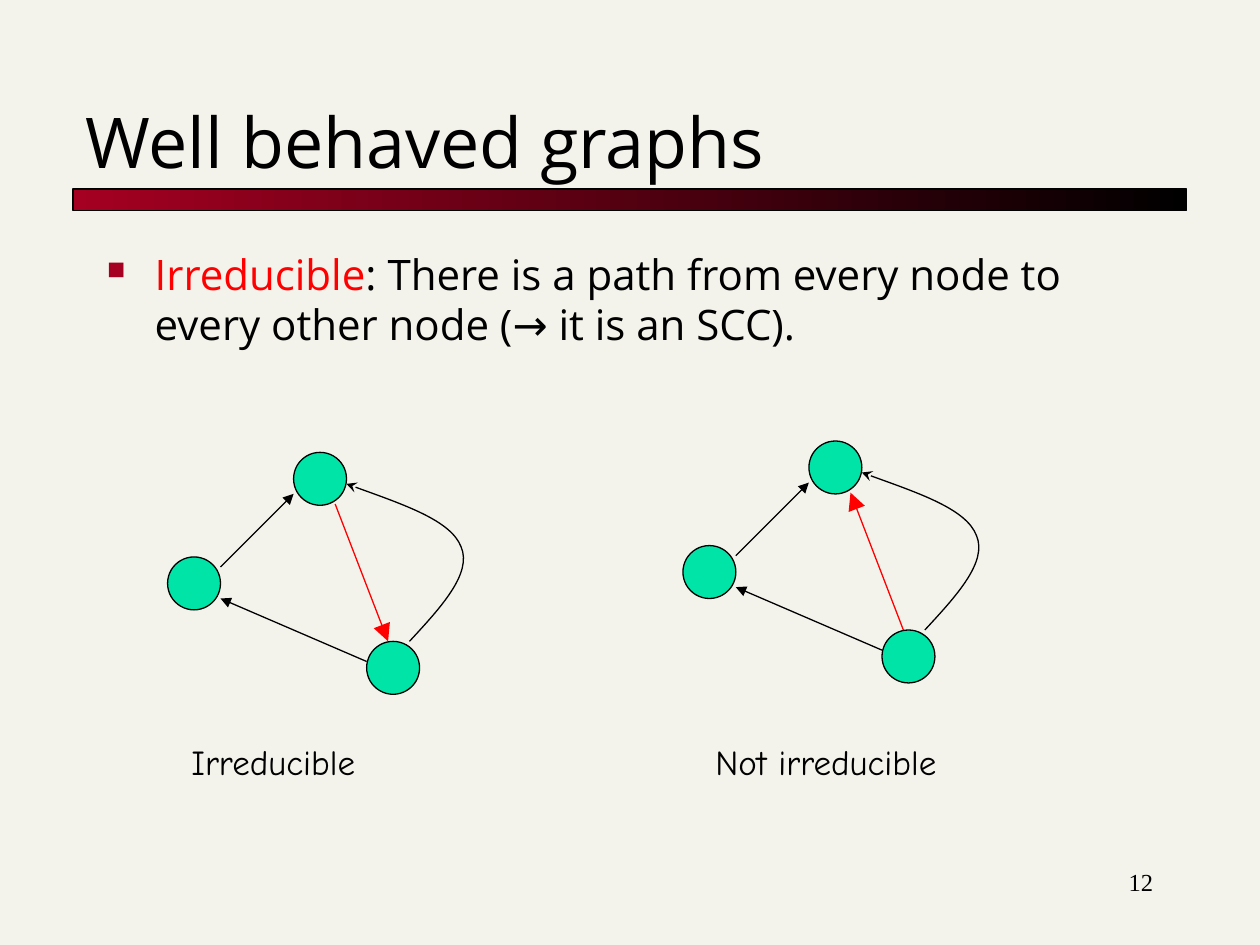
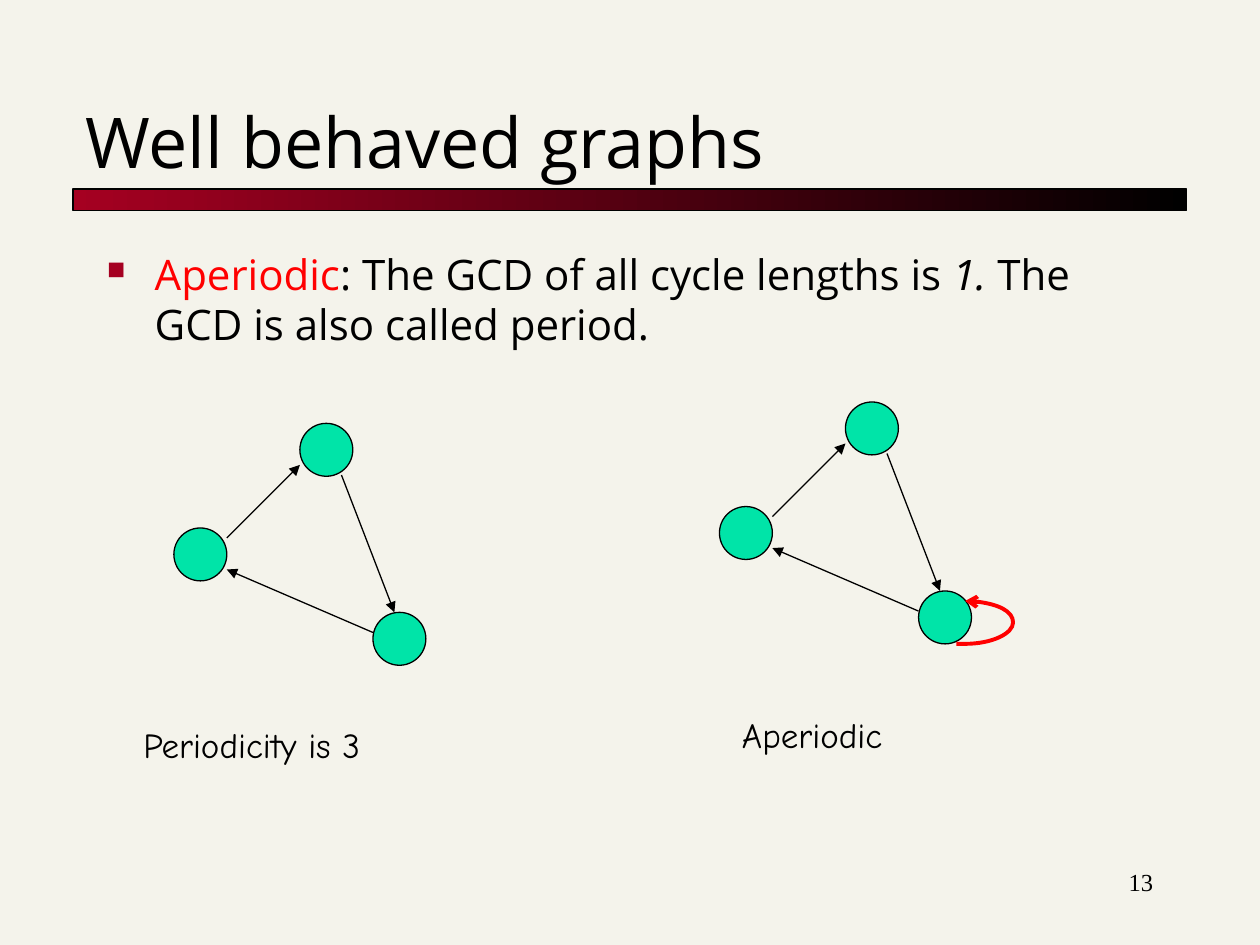
import pptx
import pptx.dml.color
import pptx.enum.shapes
import pptx.enum.text
import pptx.oxml
import pptx.oxml.ns
import pptx.util
from lxml import etree

Inches = pptx.util.Inches
Pt = pptx.util.Pt
RGB = pptx.dml.color.RGBColor
SHAPE = pptx.enum.shapes.MSO_SHAPE
ANCHOR = pptx.enum.text.MSO_ANCHOR
ALIGN = pptx.enum.text.PP_ALIGN
qn = pptx.oxml.ns.qn

CREAM = RGB(0xF4, 0xF3, 0xEB)
WINE = RGB(0xA5, 0x00, 0x21)
BLACK = RGB(0, 0, 0)
RED = RGB(0xFF, 0, 0)
GREEN = RGB(0x00, 0xE4, 0xA8)

TITLE = {"name": "Open Sans", "size": Pt(40)}
BODY = {"name": "Open Sans", "size": Pt(24)}
LABEL = {"name": "Comic Neue", "size": Pt(20)}
NUMBER = {"name": "Times New Roman", "size": Pt(14)}

# Graph parts, in inches from the corner of the left node
SIZE = 0.42
NODES = [(0, 0), (1, -0.83), (1.58, 0.67)]
UP = [(0.42, 0.08), (1, -0.5)]
DOWN = [(1.33, -0.42), (1.75, 0.67)]
BACK = [(1.58, 0.83), (0.42, 0.33)]
ARC = [(1.92, 0.67), (2.17, 0.4), (2.42, 0.13), (2.33, -0.08),
       (2.25, -0.29), (1.83, -0.43), (1.42, -0.58)]
LOOP = [(1.88, 1.09), (1.91, 1.09), (1.93, 1.09), (1.95, 1.09),
        (2.16, 1.09), (2.33, 1.01), (2.33, 0.92),
        (2.33, 0.83), (2.16, 0.75), (1.95, 0.75)]


class Deck:
    def __init__(self):
        self.prs = pptx.Presentation()
        self.prs.slide_width = Inches(10)
        self.prs.slide_height = Inches(7.5)
        self.slide = None

    def page(self, title, num):
        """Start a slide with its background, band, title and number."""
        self.slide = self.prs.slides.add_slide(self.prs.slide_layouts[6])
        fill = self.slide.background.fill
        fill.solid()
        fill.fore_color.rgb = CREAM
        self.band()
        self.text((0.58, 0.42, 8.83, 1.08), [(title, {})], TITLE, ANCHOR.BOTTOM)
        self.text((7.17, 6.83, 2.08, 0.5), [(str(num), {})], NUMBER).alignment = ALIGN.RIGHT

    def shape(self, kind, box):
        item = self.slide.shapes.add_shape(kind, *map(Inches, box))
        item.shadow.inherit = False
        self.line(item, BLACK)
        return item

    def line(self, item, color, width=0.75):
        item.line.color.rgb = color
        item.line.width = Pt(width)

    def band(self):
        fill = self.shape(SHAPE.RECTANGLE, (0.58, 1.5, 8.84, 0.17)).fill
        fill.gradient()
        fill.gradient_angle = 0
        for stop, color in zip(fill.gradient_stops, (WINE, BLACK)):
            stop.color.rgb = color

    def text(self, box, runs, style, anchor=ANCHOR.TOP):
        """Add one paragraph of (text, format) runs and return it."""
        frame = self.slide.shapes.add_textbox(*map(Inches, box)).text_frame
        frame.word_wrap = True
        frame.vertical_anchor = anchor
        para = frame.paragraphs[0]
        for words, extra in runs:
            run = para.add_run()
            run.text = words
            form = {**style, "color": BLACK, **extra}
            run.font.color.rgb = form.pop("color")
            for key, value in form.items():
                setattr(run.font, key, value)
        return para

    def indent(self, para, left, first=0.0):
        props = para._p.get_or_add_pPr()
        props.set("marL", str(Inches(left)))
        props.set("indent", str(Inches(first)))
        return props

    def bullet(self, runs):
        para = self.text((0.75, 1.92, 8.5, 5.33), runs, BODY)
        props = self.indent(para, 0.38, -0.38)
        color = etree.SubElement(props, qn("a:buClr"))
        etree.SubElement(color, qn("a:srgbClr"), val=str(WINE))
        etree.SubElement(props, qn("a:buSzPct"), val="60000")
        etree.SubElement(props, qn("a:buChar"), char="■")

    def label(self, words, left, top, width, indent=0):
        para = self.text((left, top, width, 0.5), [(words, {})], LABEL)
        if indent:
            self.indent(para, indent)

    def head(self, item, kind, size="med"):
        """Put an arrowhead at the end of a line."""
        ln = item.element.spPr.find(qn("a:ln"))
        etree.SubElement(ln, qn("a:tailEnd"), type=kind, w=size, len=size)

    def arrow(self, start, end, color=BLACK, size="med"):
        item = self.slide.shapes.add_connector(
            pptx.enum.shapes.MSO_CONNECTOR.STRAIGHT, *map(Inches, (*start, *end)))
        self.line(item, color)
        self.head(item, "triangle", size)
        etree.SubElement(item.element.spPr, qn("a:effectLst"))

    def curve(self, points, kind, color=BLACK, width=0.75):
        """Draw a Bezier curve: a start, then three points per segment."""
        start, *rest = [(Inches(x), Inches(y)) for x, y in points]
        maker = self.slide.shapes.build_freeform(*start)
        maker.add_line_segments(rest, close=False)
        item = maker.convert_to_shape()
        item.shadow.inherit = False
        item.fill.background()
        self.line(item, color, width)
        self.head(item, kind)
        # Turn each three straight steps into one cubic segment
        track = next(item.element.iter(qn("a:path")))
        steps = track.findall(qn("a:lnTo"))
        for i in range(0, len(steps), 3):
            cubic = etree.SubElement(track, qn("a:cubicBezTo"))
            for step in steps[i:i + 3]:
                cubic.append(step[0])
                track.remove(step)

    def graph(self, left, top, down=DOWN, red=False, arc=False, loop=False):
        def place(points):
            return [(left + x, top + y) for x, y in points]

        for x, y in place(NODES):
            fill = self.shape(SHAPE.OVAL, (x, y, SIZE, SIZE)).fill
            fill.solid()
            fill.fore_color.rgb = GREEN
        self.arrow(*place(UP))
        self.arrow(*place(down), *((RED, "lg") if red else ()))
        self.arrow(*place(BACK))
        if arc:
            self.curve(place(ARC), "stealth")
        if loop:
            self.curve(place(LOOP), "arrow", RED, 2.25)


def main():
    deck = Deck()
    title = "Well behaved graphs"

    # Irreducible graphs
    deck.page(title, 12)
    deck.bullet([
        ("Irreducible", {"color": RED}),
        (": There is a path from every node to every other node (→ it is an SCC).", {})])
    deck.graph(1.33, 4.42, red=True, arc=True)
    deck.graph(5.42, 4.33, down=DOWN[::-1], red=True, arc=True)
    deck.label("Irreducible", 1.42, 5.83, 2.42)
    deck.label("Not irreducible", 5.58, 5.83, 3.17)

    # Aperiodic graphs
    deck.page(title, 13)
    deck.bullet([
        ("Aperiodic", {"color": RED}),
        (": The GCD of all cycle lengths is ", {}),
        ("1. ", {"italic": True}),
        ("The GCD is also called period.", {})])
    deck.label("Aperiodic", 4.79, 5.61, 3.75, indent=1)
    deck.label("Periodicity is 3", 1.04, 5.69, 3.17)
    deck.graph(1.38, 4.19)
    deck.graph(5.71, 4.02, loop=True)

    deck.prs.save("out.pptx")


if __name__ == "__main__":
    main()
